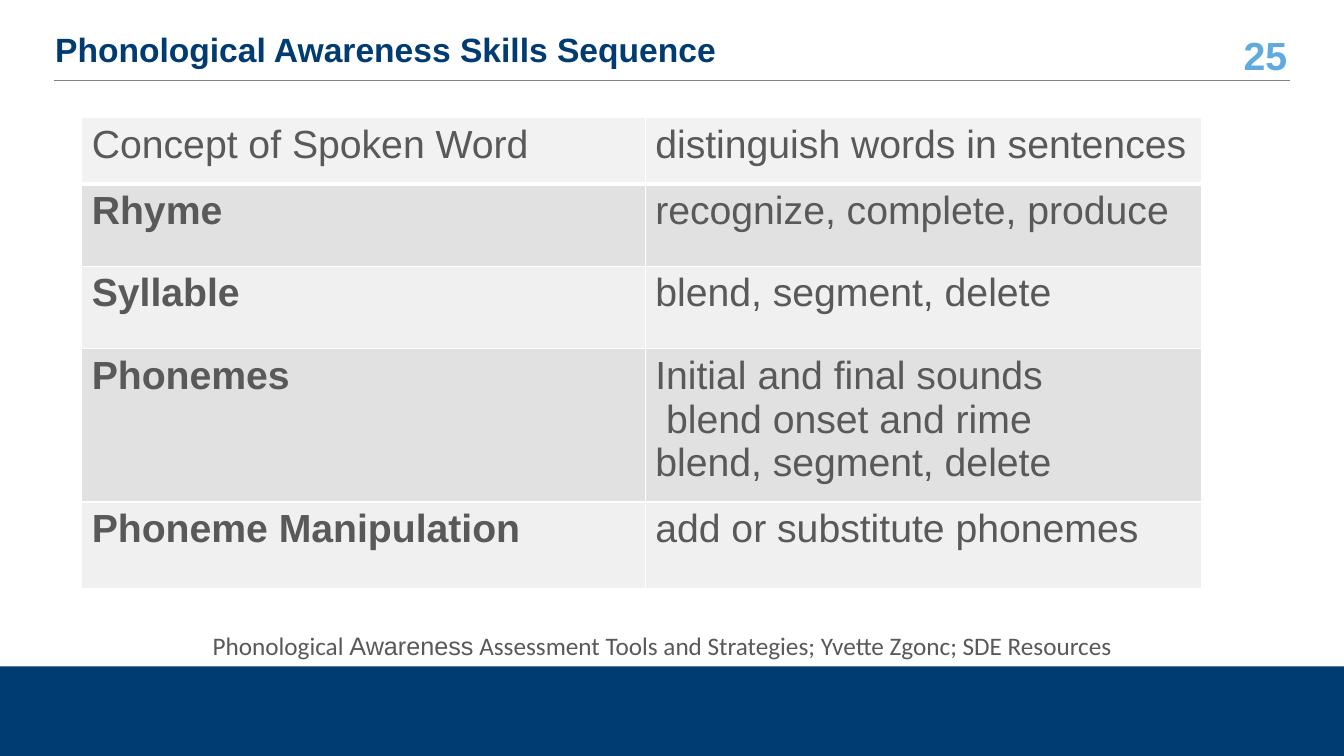
import lxml.etree
import pptx
import pptx.dml.color
import pptx.enum.shapes
import pptx.enum.text
import pptx.oxml.ns
import pptx.util

Cm, Pt = pptx.util.Cm, pptx.util.Pt
qn = pptx.oxml.ns.qn
ALIGN = pptx.enum.text.PP_ALIGN
ANCHOR = pptx.enum.text.MSO_ANCHOR

# Content
TITLE = "Phonological Awareness Skills Sequence"
PAGE_NUMBER = "25"
SKILLS = [
    ("Concept of Spoken Word", "distinguish words in sentences"),
    ("Rhyme", "recognize, complete, produce"),
    ("Syllable", "blend, segment, delete"),
    ("Phonemes", "Initial and final sounds\n blend onset and rime\nblend, segment, delete"),
    ("Phoneme Manipulation", "add or substitute phonemes"),
]
CITATION = [
    ("Phonological ", "Calibri"),
    ("Awareness", "Arial"),
    (" Assessment Tools and Strategies; Yvette Zgonc; SDE Resources", "Calibri"),
]

THEME = {
    "font": "Arial",
    "navy": "003B71", "sky": "5FAADE", "text": "595959", "rule": "808080",
    "white": "FFFFFF", "first_row": "F2F2F2", "bands": ("F0F0F0", "E1E1E1"),
    "title_size": 24, "number_size": 28, "table_size": 28, "citation_size": 18,
}

# Layout, in centimetres
SLIDE_SIZE = (33.87, 19.05)
FOOTER_BOX = (-0.03, 16.79, 33.9, 2.41)
NUMBER_BOX = (30.66, 0.84, 2.03, 1.07)
TITLE_BOX = (1.14, 0.76, 29.46, 1.07)
HEADER_RULE = (32.51, 2.03, 1.37, 2.03)
TABLE_CORNER = (2.06, 2.97)
COLUMN_WIDTHS = (14.2, 14.02)
ROW_HEIGHTS = (1.66, 2.08, 2.08, 3.86, 2.18)
CITATION_BOX = (5.11, 15.77, 25.5, 1.02)


def lengths(values):
    return [Cm(value) for value in values]


def rgb(color):
    return pptx.dml.color.RGBColor.from_string(color)


def style_font(font, size, color, bold=False, name=THEME["font"]):
    font.name, font.size, font.bold = name, Pt(size), bold
    font.color.rgb = rgb(color)


def add_text(slide, box, pieces, size, color, bold=False, anchor=ANCHOR.MIDDLE):
    frame = slide.shapes.add_textbox(*lengths(box)).text_frame
    frame.word_wrap = True
    frame.vertical_anchor = anchor
    paragraph = frame.paragraphs[0]
    for words, font_name in pieces:
        run = paragraph.add_run()
        run.text = words
        style_font(run.font, size, color, bold, font_name)
    return paragraph


def add_border(cell, side, width):
    border = lxml.etree.SubElement(
        cell._tc.get_or_add_tcPr(), qn(f"a:ln{side}"), w=str(Pt(width)))
    fill = lxml.etree.SubElement(border, qn("a:solidFill"))
    lxml.etree.SubElement(fill, qn("a:srgbClr"), val=THEME["white"])


def add_skills_table(slide):
    size = (sum(COLUMN_WIDTHS), sum(ROW_HEIGHTS))
    table = slide.shapes.add_table(
        len(SKILLS), len(COLUMN_WIDTHS), *lengths(TABLE_CORNER + size)).table
    table.first_row = table.horz_banding = False
    for column, width in zip(table.columns, COLUMN_WIDTHS):
        column.width = Cm(width)
    for row, height in zip(table.rows, ROW_HEIGHTS):
        row.height = Cm(height)
    for row_index, skill in enumerate(SKILLS):
        is_first = row_index == 0
        fill = THEME["first_row"] if is_first else THEME["bands"][row_index % 2]
        for column_index, words in enumerate(skill):
            cell = table.cell(row_index, column_index)
            for side in "LRTB":
                add_border(cell, side, 3 if is_first and side == "B" else 1)
            cell.fill.solid()
            cell.fill.fore_color.rgb = rgb(fill)
            cell.text_frame.text = words
            bold = column_index == 0 and not is_first
            for paragraph in cell.text_frame.paragraphs:
                for run in paragraph.runs:
                    style_font(run.font, THEME["table_size"], THEME["text"], bold)


def main():
    deck = pptx.Presentation()
    deck.slide_width, deck.slide_height = lengths(SLIDE_SIZE)
    slide = deck.slides.add_slide(deck.slide_layouts[6])

    # Footer band
    footer = slide.shapes.add_shape(
        pptx.enum.shapes.MSO_SHAPE.RECTANGLE, *lengths(FOOTER_BOX))
    footer.shadow.inherit = False
    footer.fill.solid()
    footer.fill.fore_color.rgb = rgb(THEME["navy"])
    footer.line.fill.background()

    # Header: page number, rule and title
    number = add_text(slide, NUMBER_BOX, [(PAGE_NUMBER, THEME["font"])],
                      THEME["number_size"], THEME["sky"], bold=True)
    number.alignment = ALIGN.RIGHT
    rule = slide.shapes.add_connector(
        pptx.enum.shapes.MSO_CONNECTOR.STRAIGHT, *lengths(HEADER_RULE))
    rule.line.color.rgb = rgb(THEME["rule"])
    rule.line.width = Pt(0.5)
    lxml.etree.SubElement(rule._element.spPr, qn("a:effectLst"))
    title = add_text(slide, TITLE_BOX, [(TITLE, THEME["font"])],
                     THEME["title_size"], THEME["navy"], bold=True)
    title.line_spacing = 0.9

    # Skills and their citation
    add_skills_table(slide)
    add_text(slide, CITATION_BOX, CITATION, THEME["citation_size"],
             THEME["text"], anchor=ANCHOR.TOP)

    deck.save("out.pptx")


if __name__ == "__main__":
    main()
